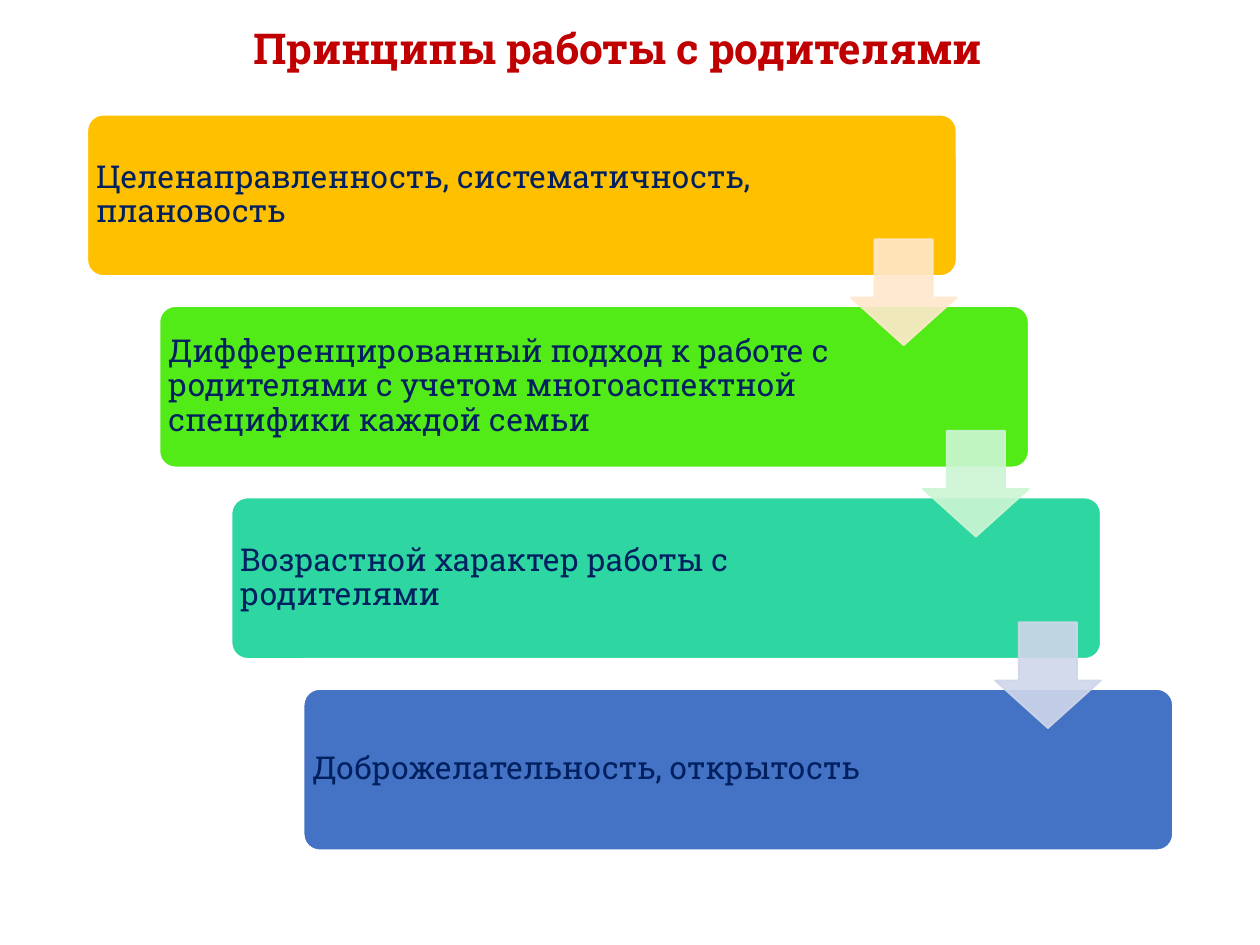
from lxml.etree import SubElement
from pptx import Presentation
from pptx.dml.color import RGBColor
from pptx.enum.shapes import MSO_SHAPE as SHAPE
from pptx.enum.text import MSO_ANCHOR as ANCHOR, PP_ALIGN as ALIGN
from pptx.oxml.ns import qn
from pptx.util import Pt

FONT = "Roboto Slab"
RED = RGBColor(0xC0, 0x00, 0x00)
NAVY = RGBColor(0x00, 0x20, 0x60)
WHITE = RGBColor(0xFF, 0xFF, 0xFF)
AMBER = RGBColor(0xFF, 0xC0, 0x00)
GREEN = RGBColor(0x53, 0xEB, 0x17)
TEAL = RGBColor(0x2E, 0xD7, 0xA1)
BLUE = RGBColor(0x44, 0x72, 0xC4)
PALE_PEACH = RGBColor(0xFF, 0xE8, 0xCC)
PALE_GREEN = RGBColor(0xCC, 0xF6, 0xD3)
PALE_BLUE = RGBColor(0xCF, 0xD6, 0xEA)

# Staircase geometry, in points
LEFT, TOP = 49.9, 65.5
STEP_X, STEP_Y = 41.2, 109.4
BAND_W, BAND_H = 496.8, 92.2
TEXT_W, INSET = 395, 5
ARROW_X, ARROW_Y, ARROW_SIZE = 436.3, 71.3, 60.5

PRINCIPLES = [
    ("Целенаправленность, систематичность, плановость", AMBER),
    ("Дифференцированный подход к работе с родителями с учетом "
     "многоаспектной специфики каждой семьи", GREEN),
    ("Возрастной характер работы с родителями", TEAL),
    ("Доброжелательность, открытость", BLUE),
]
ARROW_COLORS = [PALE_PEACH, PALE_GREEN, PALE_BLUE]


def add_filled(kind, left, top, width, height, fill, line):
    shape = slide.shapes.add_shape(kind, Pt(left), Pt(top), Pt(width), Pt(height))
    shape.shadow.inherit = False
    shape.fill.solid()
    shape.fill.fore_color.rgb = fill
    shape.line.color.rgb = line
    shape.line.width = Pt(1)
    return shape


def style_text(paragraph, size, color, bold):
    paragraph.alignment = ALIGN.LEFT
    paragraph.line_spacing = 0.9
    font = paragraph.font
    font.name, font.size, font.bold = FONT, Pt(size), bold
    font.color.rgb = color


prs = Presentation()
prs.slide_width, prs.slide_height = Pt(720), Pt(540)
slide = prs.slides.add_slide(prs.slide_layouts[5])

# Title
title = slide.shapes.title
title.left, title.top, title.width, title.height = Pt(137.5), Pt(4), Pt(532.8), Pt(50.4)
title.text_frame.text = "Принципы работы с родителями"
title.text_frame.vertical_anchor = ANCHOR.MIDDLE
style_text(title.text_frame.paragraphs[0], 24.3, RED, True)

# Principles, each a step further right and down
for i, (principle, color) in enumerate(PRINCIPLES):
    left, top = LEFT + i * STEP_X, TOP + i * STEP_Y
    band = add_filled(SHAPE.ROUNDED_RECTANGLE, left, top, BAND_W, BAND_H, color, WHITE)
    band.adjustments[0] = 0.1

    label = slide.shapes.add_textbox(Pt(left), Pt(top), Pt(TEXT_W), Pt(BAND_H))
    frame = label.text_frame
    frame.word_wrap = True
    frame.vertical_anchor = ANCHOR.MIDDLE
    frame.margin_left = frame.margin_right = Pt(INSET)
    frame.margin_top = frame.margin_bottom = Pt(INSET)
    frame.text = principle
    style_text(frame.paragraphs[0], 18, NAVY, False)

# Translucent arrows between neighbouring steps
for i, color in enumerate(ARROW_COLORS):
    arrow = add_filled(SHAPE.DOWN_ARROW, LEFT + ARROW_X + i * STEP_X,
                       TOP + ARROW_Y + i * STEP_Y, ARROW_SIZE, ARROW_SIZE, color, color)
    arrow.adjustments[0], arrow.adjustments[1] = 0.55, 0.45
    for rgb in arrow.element.spPr.iter(qn("a:srgbClr")):
        SubElement(rgb, qn("a:alpha"), val="90000")

prs.save("out.pptx")
